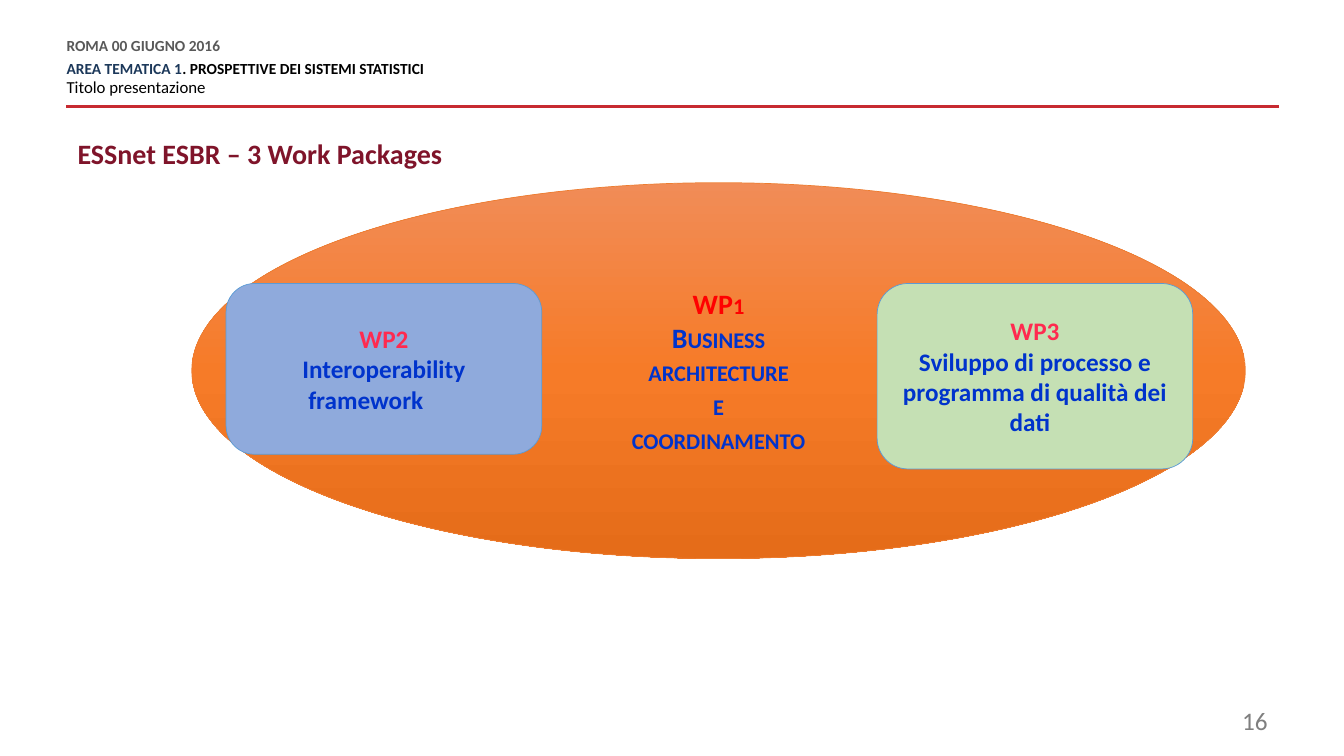
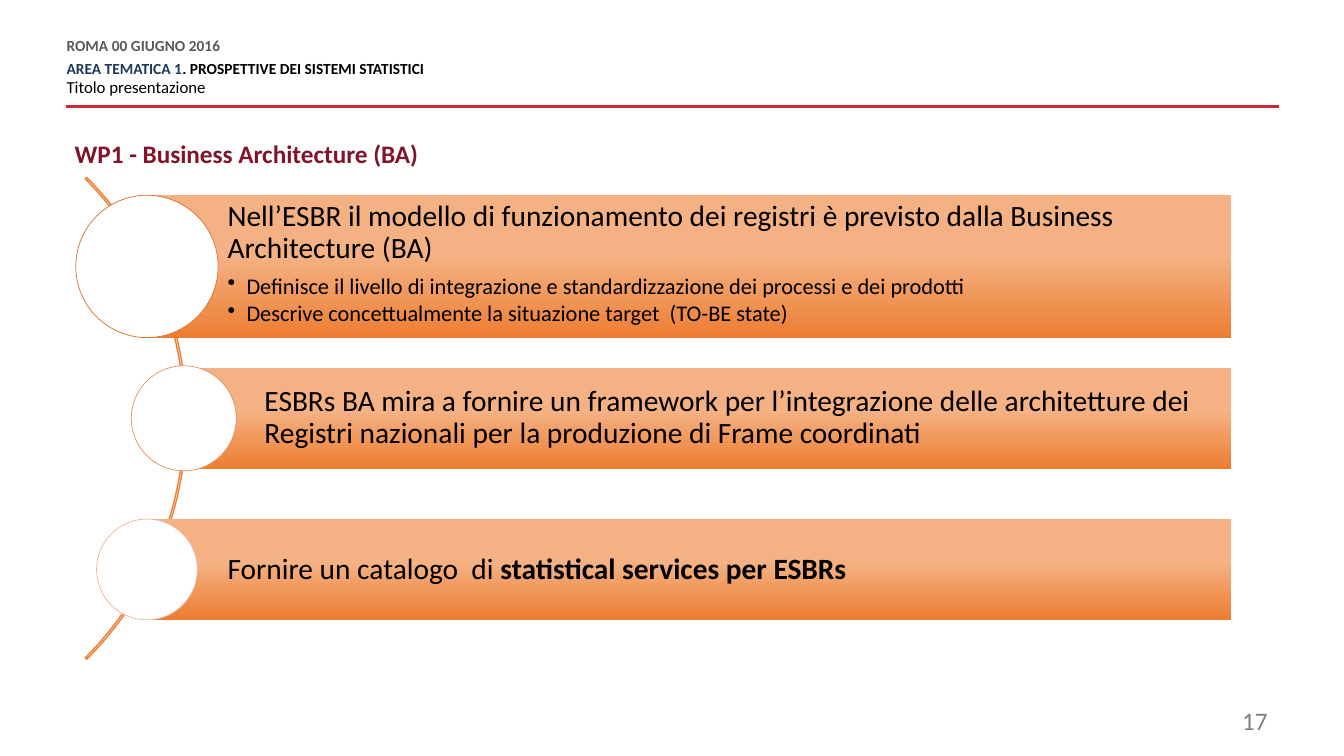
from copy import deepcopy
from lxml.etree import SubElement
from pptx import Presentation
from pptx.dml.color import RGBColor
from pptx.enum.shapes import MSO_CONNECTOR, MSO_SHAPE
from pptx.enum.text import MSO_ANCHOR, PP_ALIGN
from pptx.oxml.ns import qn
from pptx.util import Pt

# Shared look
FONT = "Calibri"
HEX = {
    "rule": "C72A31", "date": "595959", "area": "1C385A", "text": "000000",
    "page": "7F7F7F", "title": "7F142A", "red": "FF0000", "pink": "FF2A4F",
    "blue": "0033CC", "oval": "ED7D31", "edge": "5B9BD5", "left": "8FAADC",
    "right": "C5E0B4", "arc": "ED7F39", "white": "FFFFFF",
    "ring1": "D7712C", "ring2": "E78F62", "ring3": "F3B39B",
}
OVAL = [(0, "F18C57"), (0.5, "F67B28"), (1, "E56C19")]
BAR = [(0, "F4B183"), (0.43, "F4B183"), (1, "ED7D31")]

# Content
HEAD = ["ROMA 00 GIUGNO 2016", "AREA TEMATICA 1",
        ". PROSPETTIVE DEI SISTEMI STATISTICI", "Titolo presentazione"]
TITLES = [  # text, size, left, top, page
    ("ESSnet ESBR – 3 Work Packages", 20, 48.2, 93.6, "16"),
    ("WP1 - Business Architecture (BA)", 18, 46.1, 95, "17"),
]
CORE = ["WP1", "Business", "architecture", "e", "coordinamento"]
PACKS = [  # name, text, left, height, fill
    ("WP2", "Interoperability framework\t", 161.5, 122, "left"),
    ("WP3", "Sviluppo di processo e programma di qualità dei dati\t",
     626.5, 132.5, "right"),
]
STEPS = [  # lead, bold end, points, ring centre, top, height, ring size, line
    ("Nell’ESBR il modello di funzionamento dei registri è previsto dalla "
     "Business Architecture (BA)", "",
     ["Definisce il livello di integrazione e standardizzazione dei processi "
      "e dei prodotti",
      "Descrive concettualmente la situazione target  (TO-BE state)"],
     105, 139.5, 101.7, 101.7, "ring1"),
    ("ESBRs BA mira a fornire un framework per l’integrazione delle "
     "architetture dei Registri nazionali per la produzione di Frame "
     "coordinati", "", [], 131.3, 262.8, 72, 75, "ring2"),
    ("Fornire un catalogo  di ", "statistical services per ESBRs", [],
     105, 370.8, 72, 72, "ring3"),
]
END = 879.5  # right edge of the bars


def tone(name):
    return RGBColor.from_string(HEX[name])


def style(par, size, color, bold=False, align=None):
    font = par.font
    font.name, font.size, font.bold = FONT, Pt(size), bold
    font.color.rgb = tone(color)
    if align is not None:
        par.alignment = align


def lines(frame, count):
    """Give the frame this many paragraphs."""
    return [frame.paragraphs[0]] + [frame.add_paragraph()
                                    for _ in range(count - 1)]


def box(slide, left, top, width, height):
    frame = slide.shapes.add_textbox(
        Pt(left), Pt(top), Pt(width), Pt(height)).text_frame
    frame.word_wrap = True
    return frame


def blend(shape, stops):
    """Fill from top to bottom through three stops."""
    shape.fill.gradient()
    shape.fill.gradient_angle = 270
    group = shape._element.spPr.find(".//" + qn("a:gsLst"))
    group.append(deepcopy(group[-1]))
    for stop, (place, code) in zip(shape.fill.gradient_stops, stops):
        stop.position = place
        stop.color.rgb = RGBColor.from_string(code)


def draw(slide, kind, left, top, width, height, fill, line=None, weight=0.5):
    shape = slide.shapes.add_shape(
        kind, Pt(left), Pt(top), Pt(width), Pt(height))
    shape.shadow.inherit = False
    if isinstance(fill, list):
        blend(shape, fill)
    elif fill:
        shape.fill.solid()
        shape.fill.fore_color.rgb = tone(fill)
    else:
        shape.fill.background()
    if line:
        shape.line.color.rgb = tone(line)
        shape.line.width = Pt(weight)
    else:
        shape.line.fill.background()
    shape.text_frame.vertical_anchor = MSO_ANCHOR.MIDDLE
    return shape


def header(slide, layout):
    """Build the header once and place it on the layout."""
    rule = slide.shapes.add_connector(
        MSO_CONNECTOR.STRAIGHT, Pt(913.7), Pt(76.3), Pt(47.5), Pt(76.3))
    rule.line.color.rgb = tone("rule")
    rule.line.width = Pt(2)
    SubElement(rule._element.spPr, qn("a:effectLst"))
    frame = box(slide, 47.5, 28, 600, 42.5)
    frame.margin_left = frame.margin_right = 0
    frame.margin_top = frame.margin_bottom = 0
    date, area, name = lines(frame, 3)
    for par in (date, area, name):
        par.line_spacing = Pt(10.8)
    date.space_after = name.space_after = Pt(6)
    name.space_before = Pt(3)
    date.text, name.text = HEAD[0], HEAD[3]
    for text, color in zip(HEAD[1:3], ("area", "text")):
        run = area.add_run()
        run.text = text
        run.font.color.rgb = tone(color)
    style(date, 11, "date", True)
    style(area, 11, "text", True)
    style(name, 12, "text")
    for part in (rule._element, frame._txBody.getparent()):
        layout.shapes._spTree.append(part)


def start(deck, layout, text, size, left, top, page):
    slide = deck.slides.add_slide(layout)
    title = slide.shapes.title
    title.left, title.top = Pt(left), Pt(top)
    title.width, title.height = Pt(480), Pt(31)
    title.text_frame.vertical_anchor = MSO_ANCHOR.TOP
    title.text = text
    style(title.text_frame.paragraphs[0], size, "title", True, PP_ALIGN.LEFT)
    par = box(slide, 688.5, 500.4, 224, 29).paragraphs[0]
    par.text = page
    style(par, 18, "page", align=PP_ALIGN.RIGHT)
    return slide


def packs(slide):
    oval = draw(slide, MSO_SHAPE.OVAL, 137, 130.5, 752.5, 268.5, OVAL, "oval")
    for par, text in zip(lines(oval.text_frame, len(CORE)), CORE):
        par.text = text
        style(par, 20, "red" if text == CORE[0] else "blue", True,
              PP_ALIGN.CENTER)
        par.font._element.set("cap", "small")
    for name, text, left, height, fill in PACKS:
        card = draw(slide, MSO_SHAPE.ROUNDED_RECTANGLE, left, 202.5, 225.5,
                    height, fill, "edge")
        for par, words, color in zip(lines(card.text_frame, 2), (name, text),
                                     ("pink", "blue")):
            par.text = words
            style(par, 18, color, True, PP_ALIGN.CENTER)


def steps(slide):
    arc = draw(slide, MSO_SHAPE.BLOCK_ARC, -353.5, 55.5, 486.7, 486.7, None,
               "arc", 1)
    for spot, value in enumerate((189, 27, 0.003)):
        arc.adjustments[spot] = value
    for lead, end, points, mid, top, height, ring, line in STEPS:
        bar = draw(slide, MSO_SHAPE.RECTANGLE, mid, top, END - mid, height,
                   BAR)
        frame = bar.text_frame
        frame.margin_left = Pt(57.6)
        frame.margin_top = frame.margin_right = frame.margin_bottom = Pt(4.2)
        if points:
            frame.vertical_anchor = MSO_ANCHOR.TOP
        first, *rest = lines(frame, 1 + len(points))
        first.add_run().text = lead
        if end:
            run = first.add_run()
            run.text, run.font.bold = end, True
        first.line_spacing, first.space_after = 0.9, Pt(7.35)
        style(first, 21, "text", align=PP_ALIGN.LEFT)
        for par, text in zip(rest, points):
            par.text, par.level = text, 1
            par.line_spacing, par.space_after = 0.9, Pt(2.4)
            props = par._p.get_or_add_pPr()
            props.set("marL", str(Pt(13.5)))
            props.set("indent", str(Pt(-13.5)))
            SubElement(props, qn("a:buChar")).set("char", "•")
            style(par, 16, "text", align=PP_ALIGN.LEFT)
        draw(slide, MSO_SHAPE.OVAL, mid - ring / 2,
             top + (height - ring) / 2, ring, ring, "white", line)


def main():
    deck = Presentation()
    deck.slide_width, deck.slide_height = Pt(960), Pt(540)
    layout = deck.slide_layouts[5]
    first, second = [start(deck, layout, *row) for row in TITLES]
    header(first, layout)
    packs(first)
    steps(second)
    deck.save("out.pptx")


if __name__ == "__main__":
    main()
